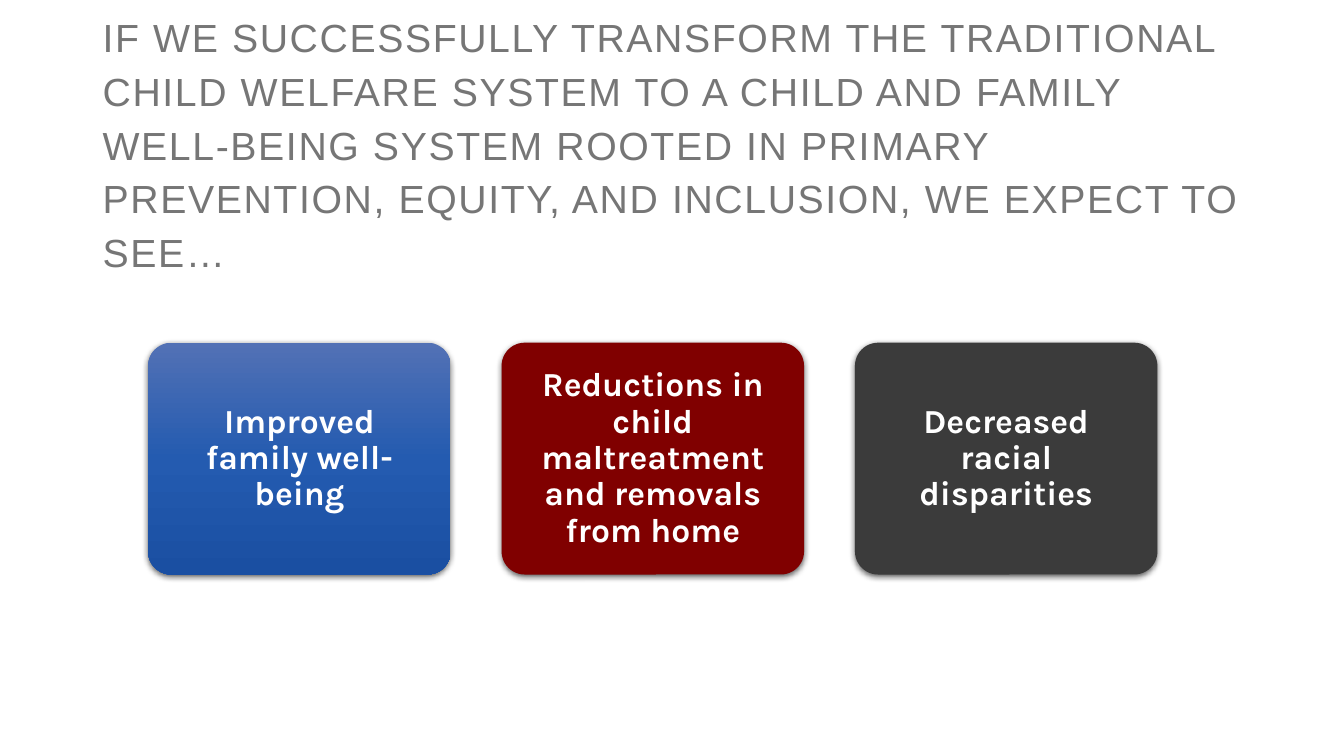
import pptx
import pptx.util
import pptx.dml.color
import pptx.enum.shapes
import pptx.enum.text
import pptx.oxml
import pptx.oxml.ns

# Content
TITLE = ("IF WE SUCCESSFULLY TRANSFORM THE TRADITIONAL CHILD WELFARE SYSTEM "
         "TO A CHILD AND FAMILY WELL-BEING SYSTEM ROOTED IN PRIMARY PREVENTION, "
         "EQUITY, AND INCLUSION, WE EXPECT TO SEE…")
OUTCOMES = [
    ("Improved family well-being", "blue"),
    ("Reductions in child maltreatment and removals from home", "red"),
    ("Decreased racial disparities", "charcoal"),
]
COLORS = {"title": "767676", "white": "FFFFFF", "blue": "245BB0",
          "blue_top": "5271B5", "blue_bottom": "1A4FA2",
          "red": "800000", "charcoal": "3B3B3B", "shadow": "000000"}
BLUE_STOPS = [(0, "blue_top"), (50, "blue"), (100, "blue_bottom")]

# Layout in inches
SLIDE_W, SLIDE_H = 13.33, 7.5
TITLE_BOX = (0.92, 0.87, 11.5, 1.06)
CARD_LEFT, CARD_TOP, CARD_W, CARD_H = 1.47, 3.4, 3, 2.3
CARD_STEP = 3.505
CARD_INSET = 0.17

Inches, Pt = pptx.util.Inches, pptx.util.Pt
PP_ALIGN = pptx.enum.text.PP_ALIGN
NS = pptx.oxml.ns.nsdecls("a")


def rgb(name):
    return pptx.dml.color.RGBColor.from_string(COLORS[name])


def write(sp, text, *, font, size, color, bold=False, align=PP_ALIGN.LEFT,
          line=1.0, inset=(0.1, 0.05), tracking=0):
    tf = sp.text_frame
    tf.word_wrap = True
    tf.vertical_anchor = pptx.enum.text.MSO_ANCHOR.MIDDLE
    tf.margin_left = tf.margin_right = Inches(inset[0])
    tf.margin_top = tf.margin_bottom = Inches(inset[1])
    p = tf.paragraphs[0]
    p.alignment, p.line_spacing = align, line
    r = p.add_run()
    r.text = text
    r.font.name, r.font.size, r.font.bold = font, Pt(size), bold
    r.font.color.rgb = rgb(color)
    if tracking:
        r.font._element.set("spc", str(round(tracking * 100)))


def fill_gradient(sp, stops):
    """Replace the fill with a top-to-bottom gradient."""
    gs = "".join(f'<a:gs pos="{pos * 1000}"><a:srgbClr val="{COLORS[name]}"/></a:gs>'
                 for pos, name in stops)
    grad = pptx.oxml.parse_xml(f'<a:gradFill {NS} rotWithShape="1"><a:gsLst>{gs}</a:gsLst>'
                               '<a:lin ang="5400000" scaled="0"/></a:gradFill>')
    solid = sp._element.spPr.find(pptx.oxml.ns.qn("a:solidFill"))
    solid.getparent().replace(solid, grad)


def add_shadow(sp, blur=4.5, dist=1.5, alpha=63):
    sp.shadow.inherit = False
    effects = sp._element.spPr.find(pptx.oxml.ns.qn("a:effectLst"))
    effects.append(pptx.oxml.parse_xml(
        f'<a:outerShdw {NS} blurRad="{Pt(blur)}" dist="{Pt(dist)}" dir="5400000" '
        f'algn="ctr" rotWithShape="0"><a:srgbClr val="{COLORS["shadow"]}">'
        f'<a:alpha val="{alpha * 1000}"/></a:srgbClr></a:outerShdw>'))


def add_card(slide, column, text, color):
    sp = slide.shapes.add_shape(
        pptx.enum.shapes.MSO_SHAPE.ROUNDED_RECTANGLE,
        Inches(CARD_LEFT + column * CARD_STEP), Inches(CARD_TOP),
        Inches(CARD_W), Inches(CARD_H))
    sp.adjustments[0] = 0.1
    sp.fill.solid()
    sp.fill.fore_color.rgb = rgb(color)
    sp.line.fill.background()
    if color == "blue":
        fill_gradient(sp, BLUE_STOPS)
    add_shadow(sp)
    write(sp, text, font="Karla", size=24, color="white", bold=True,
          align=PP_ALIGN.CENTER, line=0.9, inset=(CARD_INSET, CARD_INSET))


def main():
    prs = pptx.Presentation()
    prs.slide_width, prs.slide_height = Inches(SLIDE_W), Inches(SLIDE_H)
    slide = prs.slides.add_slide(prs.slide_layouts[6])

    # Title
    title = slide.shapes.add_textbox(*map(Inches, TITLE_BOX))
    write(title, TITLE, font="Arial", size=28, color="title", line=1.14, tracking=1.2)

    # Outcome cards
    for column, (text, color) in enumerate(OUTCOMES):
        add_card(slide, column, text, color)

    prs.save("out.pptx")


if __name__ == "__main__":
    main()
